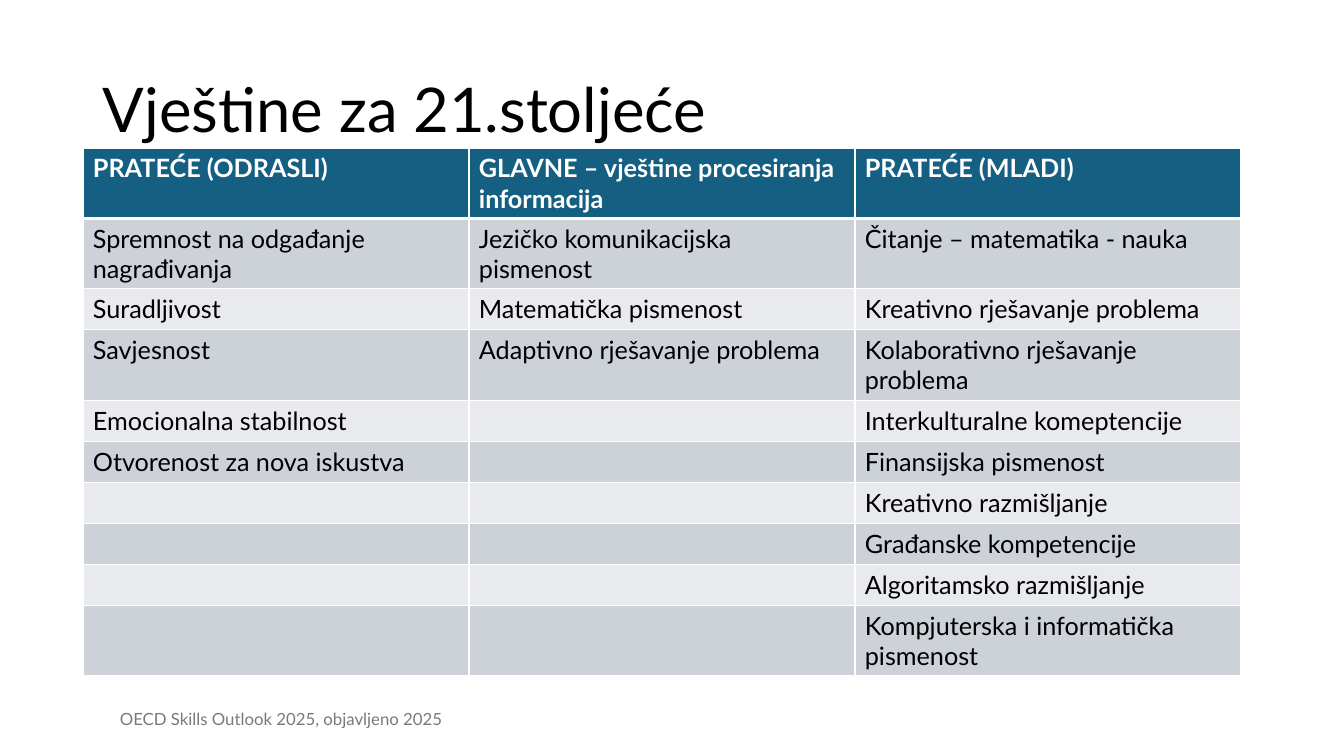
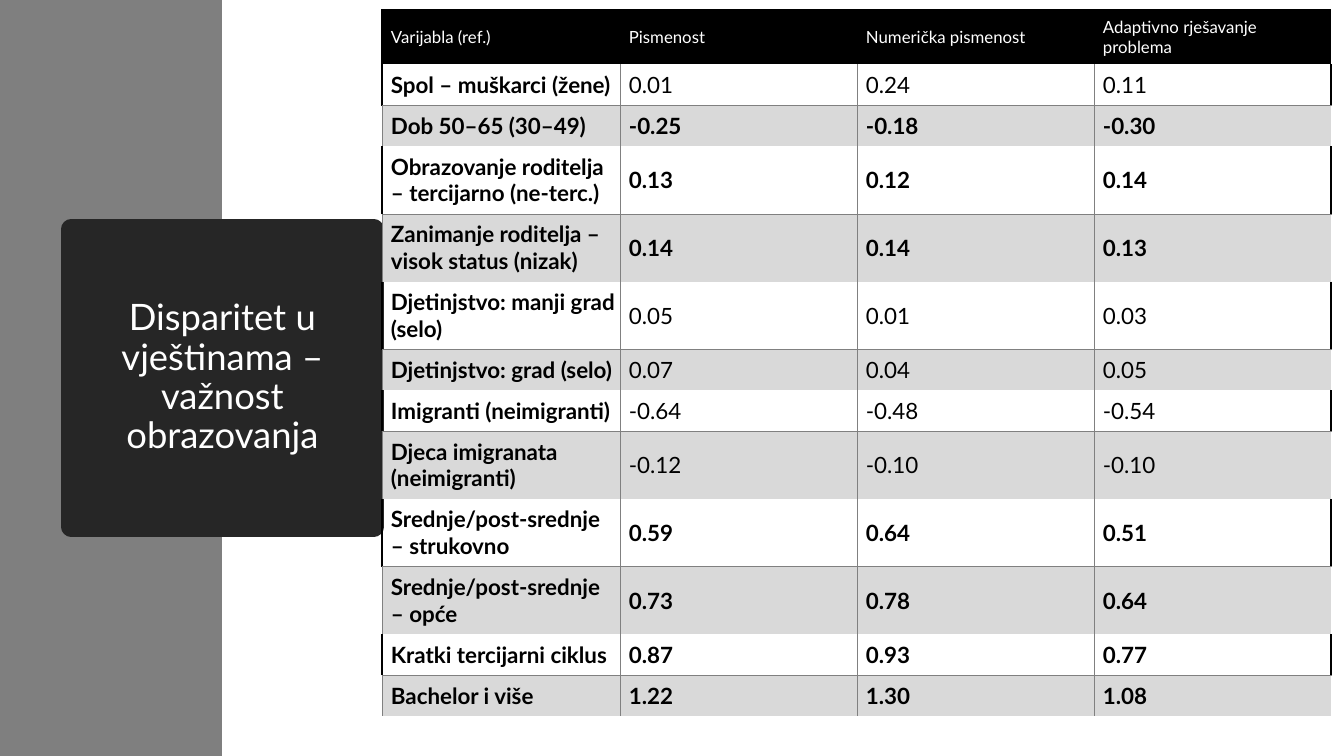
from dataclasses import dataclass

from lxml.etree import SubElement
from pptx import Presentation
from pptx.dml.color import RGBColor
from pptx.enum.shapes import MSO_SHAPE as Preset
from pptx.enum.text import MSO_ANCHOR as Anchor, PP_ALIGN as Align
from pptx.oxml.ns import qn
from pptx.util import Emu, Pt

SLIDE_W, SLIDE_H = 1344, 756
EMU_PER_PX = 12192000 / SLIDE_W
PLAIN_TABLE = "{2D5ABB26-0587-4C30-8999-92F81FD0307C}"


@dataclass(frozen=True)
class Theme:
    font: str = "Lato"
    black: str = "000000"
    white: str = "FFFFFF"
    source: str = "797979"
    header: str = "156082"
    band_dark: str = "CCD2D8"
    band_light: str = "E8EAED"
    side_band: str = "7F7F7F"
    title_card: str = "262626"
    grid: str = "808080"
    grey_row: str = "D9D9D9"
    title_pt: int = 44
    card_pt: int = 26
    skills_pt: int = 18
    effects_pt: int = 16
    small_pt: int = 12


THEME = Theme()


@dataclass(frozen=True)
class Box:
    left: int
    top: int
    width: int
    height: int


@dataclass(frozen=True)
class TextStyle:
    size: int
    color: str = THEME.black
    bold: bool = False
    align: Align = Align.LEFT
    spacing: float = 1.0


@dataclass(frozen=True)
class Border:
    color: str
    width: float


@dataclass(frozen=True)
class CellStyle:
    text: TextStyle
    fill: str | None
    borders: dict[str, Border]
    insets: tuple[int, int, int, int]
    anchor: Anchor = Anchor.TOP


@dataclass(frozen=True)
class Effect:
    variable: str
    scores: tuple[str, str, str]
    significant: bool = False
    lines: int = 1


SKILLS_HEADER = ("PRATEĆE (ODRASLI)", "GLAVNE – vještine procesiranja informacija", "PRATEĆE (MLADI)")
ADULT_SKILLS = ("Spremnost na odgađanje nagrađivanja", "Suradljivost", "Savjesnost",
                "Emocionalna stabilnost", "Otvorenost za nova iskustva")
MAIN_SKILLS = ("Jezičko komunikacijska pismenost", "Matematička pismenost",
               "Adaptivno rješavanje problema")
YOUTH_SKILLS = ("Čitanje – matematika - nauka", "Kreativno rješavanje problema",
                "Kolaborativno rješavanje problema", "Interkulturalne komeptencije",
                "Finansijska pismenost", "Kreativno razmišljanje", "Građanske kompetencije",
                "Algoritamsko razmišljanje", "Kompjuterska i informatička pismenost")
TWO_LINE_SKILL_ROWS = (0, 1, 3, 9)

EFFECTS_HEADER = ("Varijabla (ref.)", "Pismenost", "Numerička pismenost",
                  "Adaptivno rješavanje problema")
EFFECTS = (
    Effect("Spol – muškarci (žene)", ("0.01", "0.24", "0.11")),
    Effect("Dob 50–65 (30–49)", ("-0.25", "-0.18", "-0.30"), True),
    Effect("Obrazovanje roditelja – tercijarno (ne-terc.)", ("0.13", "0.12", "0.14"), True, 2),
    Effect("Zanimanje roditelja – visok status (nizak)", ("0.14", "0.14", "0.13"), True, 2),
    Effect("Djetinjstvo: manji grad (selo)", ("0.05", "0.01", "0.03"), lines=2),
    Effect("Djetinjstvo: grad (selo)", ("0.07", "0.04", "0.05")),
    Effect("Imigranti (neimigranti)", ("-0.64", "-0.48", "-0.54")),
    Effect("Djeca imigranata (neimigranti)", ("-0.12", "-0.10", "-0.10"), lines=2),
    Effect("Srednje/post-srednje – strukovno", ("0.59", "0.64", "0.51"), True, 2),
    Effect("Srednje/post-srednje – opće", ("0.73", "0.78", "0.64"), True, 2),
    Effect("Kratki tercijarni ciklus", ("0.87", "0.93", "0.77"), True),
    Effect("Bachelor i više", ("1.22", "1.30", "1.08"), True),
)


def px(length: int) -> Emu:
    return Emu(round(length * EMU_PER_PX))


def place(box: Box) -> tuple[Emu, Emu, Emu, Emu]:
    return px(box.left), px(box.top), px(box.width), px(box.height)


def rgb(color: str) -> RGBColor:
    return RGBColor.from_string(color)


def write(frame, text: str, style: TextStyle) -> None:
    paragraph = frame.paragraphs[0]
    paragraph.text = text
    paragraph.alignment = style.align
    paragraph.line_spacing = style.spacing
    font = paragraph.font
    font.name, font.size, font.bold = THEME.font, Pt(style.size), style.bold
    font.color.rgb = rgb(style.color)


def add_text(slide, box: Box, text: str, style: TextStyle) -> None:
    frame = slide.shapes.add_textbox(*place(box)).text_frame
    frame.word_wrap = True
    frame.vertical_anchor = Anchor.MIDDLE
    write(frame, text, style)


def add_block(slide, box: Box, color: str):
    block = slide.shapes.add_shape(Preset.RECTANGLE, *place(box))
    block.shadow.inherit = False
    block.fill.solid()
    block.fill.fore_color.rgb = rgb(color)
    block.line.fill.background()
    return block


def set_borders(cell, borders: dict[str, Border]) -> None:
    properties = cell._tc.get_or_add_tcPr()
    for side in "LRTB":
        border = borders.get(side)
        line = SubElement(properties, qn(f"a:ln{side}"))
        if border is None:
            line.set("w", "0")
            SubElement(line, qn("a:noFill"))
        else:
            line.set("w", str(Pt(border.width)))
            SubElement(SubElement(line, qn("a:solidFill")), qn("a:srgbClr")).set("val", border.color)


def style_cell(cell, text: str, style: CellStyle) -> None:
    cell.margin_left, cell.margin_top, cell.margin_right, cell.margin_bottom = map(px, style.insets)
    cell.vertical_anchor = style.anchor
    set_borders(cell, style.borders)
    if style.fill:
        cell.fill.solid()
        cell.fill.fore_color.rgb = rgb(style.fill)
    else:
        cell.fill.background()
    write(cell.text_frame, text, style.text)


def add_grid(slide, left: int, top: int, widths: list[int], heights: list[int],
             rows: list[tuple[str, ...]], style_for) -> None:
    box = Box(left, top, sum(widths), sum(heights))
    table = slide.shapes.add_table(len(rows), len(widths), *place(box)).table
    table.horz_banding = False
    table._tbl.tblPr.find(qn("a:tableStyleId")).text = PLAIN_TABLE
    for column, width in zip(table.columns, widths):
        column.width = px(width)
    for r, (texts, height) in enumerate(zip(rows, heights)):
        table.rows[r].height = px(height)
        for c, text in enumerate(texts):
            style_cell(table.cell(r, c), text, style_for(r, c))


def skills_style(row: int, column: int) -> CellStyle:
    thin, thick = Border(THEME.white, 1), Border(THEME.white, 3)
    borders = dict.fromkeys("LRTB", thin)
    insets = (10, 5, 10, 5)
    if row == 0:
        heading = TextStyle(THEME.skills_pt, THEME.white, True)
        return CellStyle(heading, THEME.header, borders | {"B": thick}, insets)
    if row == 1:
        borders["T"] = thick
    fill = THEME.band_dark if row % 2 else THEME.band_light
    return CellStyle(TextStyle(THEME.skills_pt), fill, borders, insets)


def effects_style(row: int, column: int) -> CellStyle:
    frame, grid = Border(THEME.black, 1.5), Border(THEME.grid, 0.5)
    first, last = column == 0, column == len(EFFECTS_HEADER) - 1
    if row == 0:
        text, fill = TextStyle(THEME.small_pt, THEME.white), THEME.black
        borders = {"T": frame} | ({"L": frame} if first else {})
    else:
        text = TextStyle(THEME.effects_pt, bold=first or EFFECTS[row - 1].significant)
        if row % 2:
            fill = None
            borders = {"L": frame if first else grid, "R": frame if last else grid, "B": grid}
        else:
            fill = THEME.grey_row
            borders = {"L": grid, "T": grid} | ({} if last else {"R": grid})
    return CellStyle(text, fill, borders, (9, 7, 4, 7), Anchor.MIDDLE)


def build_skills(slide) -> None:
    # Title
    add_text(slide, Box(93, 40, 1159, 146), "Vještine za 21.stoljeće",
             TextStyle(THEME.title_pt, spacing=0.9))

    # Skills by group, shorter groups padded with empty cells
    count = len(YOUTH_SKILLS)
    groups = [group + ("",) * (count - len(group))
              for group in (ADULT_SKILLS, MAIN_SKILLS, YOUTH_SKILLS)]
    rows = [SKILLS_HEADER, *zip(*groups)]
    heights = [70 if r in TWO_LINE_SKILL_ROWS else 41 for r in range(len(rows))]
    add_grid(slide, 83, 148, [386] * 3, heights, rows, skills_style)

    # Source line
    add_text(slide, Box(110, 696, 789, 45), "OECD Skills Outlook 2025, objavljeno 2025",
             TextStyle(THEME.small_pt, THEME.source))


def build_disparity(slide) -> None:
    # Side band
    add_block(slide, Box(0, 0, 222, SLIDE_H), THEME.side_band)

    # Title card: a wide outline with round joins softens its corners
    card = add_block(slide, Box(71, 229, 303, 298), THEME.title_card)
    card.line.color.rgb = rgb(THEME.title_card)
    card.line.width = Pt(13.75)
    SubElement(card._element.spPr.find(qn("a:ln")), qn("a:round"))
    card.text_frame.word_wrap = True
    card.text_frame.vertical_anchor = Anchor.MIDDLE
    write(card.text_frame, "Disparitet u vještinama – važnost obrazovanja",
          TextStyle(THEME.card_pt, THEME.white, align=Align.CENTER, spacing=0.9))

    # Effects on each skill
    rows = [EFFECTS_HEADER, *((effect.variable, *effect.scores) for effect in EFFECTS)]
    heights = [53, *(40 if effect.lines == 1 else 66 for effect in EFFECTS)]
    add_grid(slide, 382, 10, [238, 237, 237, 237], heights, rows, effects_style)


def main() -> None:
    deck = Presentation()
    deck.slide_width, deck.slide_height = px(SLIDE_W), px(SLIDE_H)
    blank = deck.slide_layouts[6]
    for build in (build_skills, build_disparity):
        build(deck.slides.add_slide(blank))
    deck.save("out.pptx")


if __name__ == "__main__":
    main()
